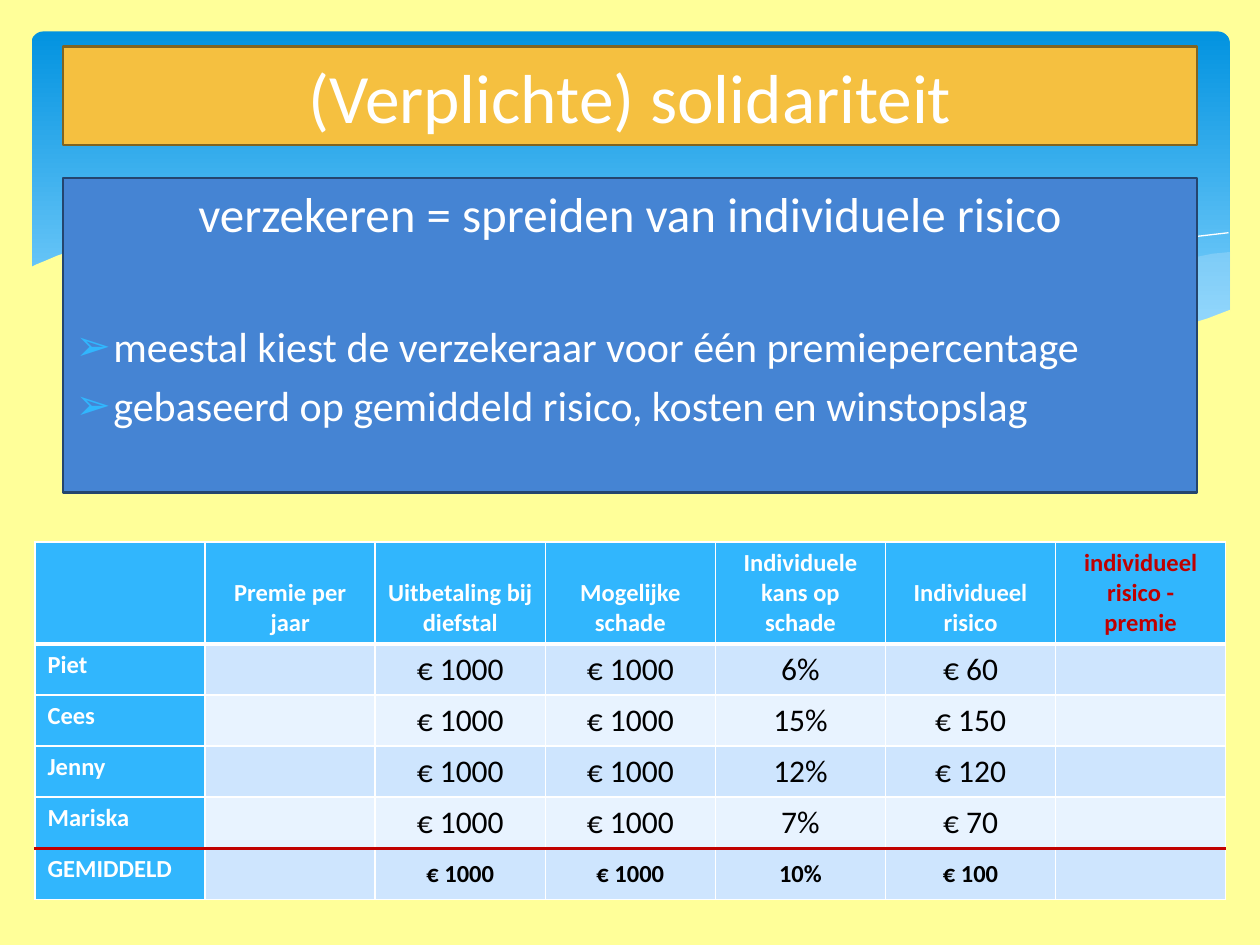
from lxml.etree import SubElement
from pptx import Presentation
from pptx.dml.color import RGBColor
from pptx.enum.shapes import MSO_SHAPE as Preset
from pptx.enum.text import MSO_ANCHOR as Anchor, MSO_AUTO_SIZE as AutoSize, PP_ALIGN as Align
from pptx.oxml.ns import qn
from pptx.util import Pt

FONT = "Calibri"
COLORS = {
    "page": "FFFF99", "white": "FFFFFF", "black": "000000",
    "sky_top": "0293E0", "sky_bottom": "83D3FE", "haze": "C6E7FC",
    "title": "F5C040", "title_edge": "806421",
    "body": "4584D3", "body_edge": "24456E",
    "accent": "31B6FD", "band_dark": "CEE5FE", "band_light": "E8F3FF", "red": "C00000",
}
HAZE = [
    (702.7, 144), (692.6, 145.4), (673.2, 149), (652.3, 153.4), (619.9, 160.6),
    (579.6, 170.6), (542.2, 178.6), (508.3, 185), (475.9, 190.8), (507.6, 194.4),
    (536.4, 197.3), (570.2, 199.4), (601.2, 199.4), (627.8, 197.3), (651.6, 193.7),
    (673.2, 188.6), (693.4, 181.4), (702.7, 177.8),
]
CREST = [
    (441.4, 185), (470.2, 177.1), (500.4, 169.2), (538.6, 160.6), (580.3, 151.2),
    (623.5, 143.3), (654.5, 138.2), (684.7, 134.6), (702, 133.2),
]
WAVE = [
    (16.6, 153.4), (20.9, 151.2), (25.9, 149), (33.1, 146.2), (42.5, 143.3),
    (54.7, 140.4), (68.4, 137.5), (85.7, 134.6), (105, 133.2), (127.4, 132.5),
    (152, 132.5), (180, 133.9), (210, 136.8), (245, 141.8), (281.5, 149),
    (321.8, 158.4), (362, 167.8), (399.6, 176.4), (434, 182.9), (466.6, 188.6),
    (495, 192.6), (522.7, 195.8), (548, 198), (571, 199.4), (592.6, 199.4),
    (612, 198), (630, 196.6), (647, 193.7), (662.4, 190.8), (676.8, 186.5),
    (690.5, 182.2), (703.4, 177.1), (703.4, 236.9), (16.6, 236.9),
]
STATEMENT = "verzekeren = spreiden van individuele risico"
POINTS = [
    "meestal kiest de verzekeraar voor één premiepercentage",
    "gebaseerd op gemiddeld risico, kosten en winstopslag",
]
RISKS = [
    ["", "Premie per jaar", "Uitbetaling bij diefstal", "Mogelijke schade",
     "Individuele kans op schade", "Individueel risico", "individueel risico - premie"],
    ["Piet", "", "€ 1000", "€ 1000", "6%", "€ 60", ""],
    ["Cees", "", "€ 1000", "€ 1000", "15%", "€ 150", ""],
    ["Jenny", "", "€ 1000", "€ 1000", "12%", "€ 120", ""],
    ["Mariska", "", "€ 1000", "€ 1000", "7%", "€ 70", ""],
    ["GEMIDDELD", "", "€ 1000", "€ 1000", "10%", "€ 100", ""],
]


def rgb(name):
    return RGBColor.from_string(COLORS[name])


def paint(fill, name):
    fill.solid()
    fill.fore_color.rgb = rgb(name)


def style_text(paragraph, size, color="white", bold=False, align=Align.LEFT):
    paragraph.alignment = align
    font = paragraph.font
    font.name, font.size, font.bold = FONT, Pt(size), bold
    font.color.rgb = rgb(color)


def add_outline(slide, points, closed=True):
    builder = slide.shapes.build_freeform(*points[0], scale=Pt(1))
    builder.add_line_segments(points[1:], close=closed)
    outline = builder.convert_to_shape()
    outline.shadow.inherit = False
    return outline


def add_backdrop(slide):
    sky = slide.shapes.add_shape(Preset.ROUNDED_RECTANGLE, Pt(18), Pt(18), Pt(684.7), Pt(194.4))
    sky.adjustments[0] = 0.034
    sky.shadow.inherit = False
    sky.line.fill.background()
    sky.fill.gradient()
    sky.fill.gradient_angle = 270
    for stop, color, position in zip(sky.fill.gradient_stops, ("sky_top", "sky_bottom"), (0, 0.9)):
        stop.color.rgb = rgb(color)
        stop.position = position

    haze = add_outline(slide, HAZE)
    paint(haze.fill, "haze")
    haze.line.fill.background()
    tint = haze.fill._xPr.find(qn("a:solidFill"))[0]
    SubElement(tint, qn("a:alpha"), val="29000")

    crest = add_outline(slide, CREST, closed=False)
    crest.fill.background()
    crest.line.color.rgb = rgb("white")
    crest.line.width = Pt(0)

    wave = add_outline(slide, WAVE)
    paint(wave.fill, "page")
    wave.line.fill.background()


def place_panel(slide, panel, top, height, color, anchor):
    """Frame a placeholder as a filled panel in front of what is drawn so far."""
    slide.shapes._spTree.append(panel._element)
    panel.left, panel.top, panel.width, panel.height = Pt(36), Pt(top), Pt(648), Pt(height)
    paint(panel.fill, color)
    panel.line.color.rgb = rgb(color + "_edge")
    panel.line.width = Pt(1.25)
    panel.text_frame.auto_size = AutoSize.NONE
    panel.text_frame.vertical_anchor = anchor
    return panel.text_frame


def set_bullet(paragraph, mark=None):
    indent = 21.6 if mark else 0
    props = paragraph._p.get_or_add_pPr()
    props.set("marL", str(Pt(indent)))
    props.set("indent", str(-Pt(indent)))
    if mark:
        tint = SubElement(props, qn("a:buClr"))
        SubElement(tint, qn("a:srgbClr"), val=COLORS["accent"])
        SubElement(props, qn("a:buChar"), char=mark)
    else:
        SubElement(props, qn("a:buNone"))


def fill_body(frame):
    statement = frame.paragraphs[0]
    statement.text = STATEMENT
    style_text(statement, 28, align=Align.CENTER)
    statement.space_before = Pt(5.6)
    set_bullet(statement)
    for text, gap in zip(POINTS, (44.6, 4.8)):
        point = frame.add_paragraph()
        point.text = text
        style_text(point, 24)
        point.space_before = Pt(gap)
        set_bullet(point, "➢")


def set_borders(cell, top, bottom):
    props = cell._tc.get_or_add_tcPr()
    sides = {"L": ("white", 1), "R": ("white", 1), "T": top, "B": bottom}
    for side, (color, width) in sides.items():
        edge = SubElement(props, qn("a:ln" + side), w=str(Pt(width)))
        ink = SubElement(edge, qn("a:solidFill"))
        SubElement(ink, qn("a:srgbClr"), val=COLORS[color])


def add_risk_table(slide):
    last_row, last_col = len(RISKS) - 1, len(RISKS[0]) - 1
    table = slide.shapes.add_table(last_row + 1, last_col + 1, Pt(20), Pt(309.6),
                                   Pt(680.4), Pt(204)).table
    for column in table.columns:
        column.width = Pt(97.2)
    thin, header_rule, total_rule = ("white", 1), ("white", 3), ("red", 2.25)
    rules = [thin, header_rule, thin, thin, thin, total_rule, thin]
    for r, values in enumerate(RISKS):
        table.rows[r].height = Pt(29.2 if r else 58)
        for c, value in enumerate(values):
            cell = table.cell(r, c)
            set_borders(cell, rules[r], rules[r + 1])
            heading = r == 0 or c == 0
            band = "band_dark" if r % 2 else "band_light"
            paint(cell.fill, "accent" if heading else band)
            if r == 0:
                cell.vertical_anchor = Anchor.BOTTOM
            elif c:
                cell.vertical_anchor = Anchor.MIDDLE
            if not value:
                continue
            cell.text = value
            strong = heading or r == last_row
            color = "red" if (r, c) == (0, last_col) else "white" if heading else "black"
            style_text(cell.text_frame.paragraphs[0], 14 if strong else 18, color, strong,
                       Align.CENTER if c else Align.LEFT)


def main():
    deck = Presentation()
    deck.slide_width, deck.slide_height = Pt(720), Pt(540)
    slide = deck.slides.add_slide(deck.slide_layouts[1])
    paint(slide.background.fill, "page")
    add_backdrop(slide)
    fill_body(place_panel(slide, slide.placeholders[1], 101.5, 180, "body", Anchor.TOP))
    heading = place_panel(slide, slide.shapes.title, 26.6, 56.2, "title", Anchor.MIDDLE)
    heading.text = "(Verplichte) solidariteit"
    style_text(heading.paragraphs[0], 39.6, align=Align.CENTER)
    add_risk_table(slide)
    deck.save("out.pptx")


if __name__ == "__main__":
    main()
